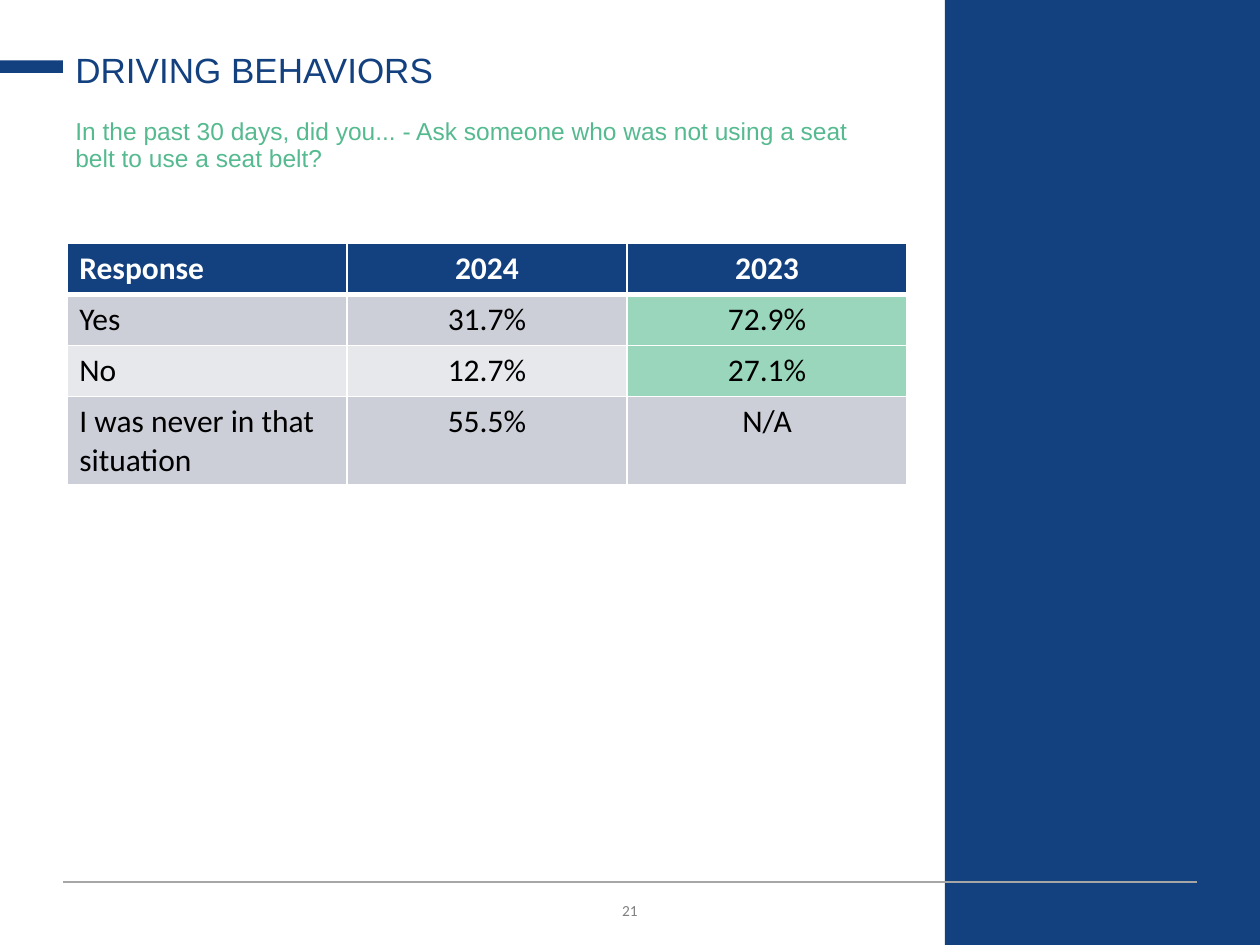
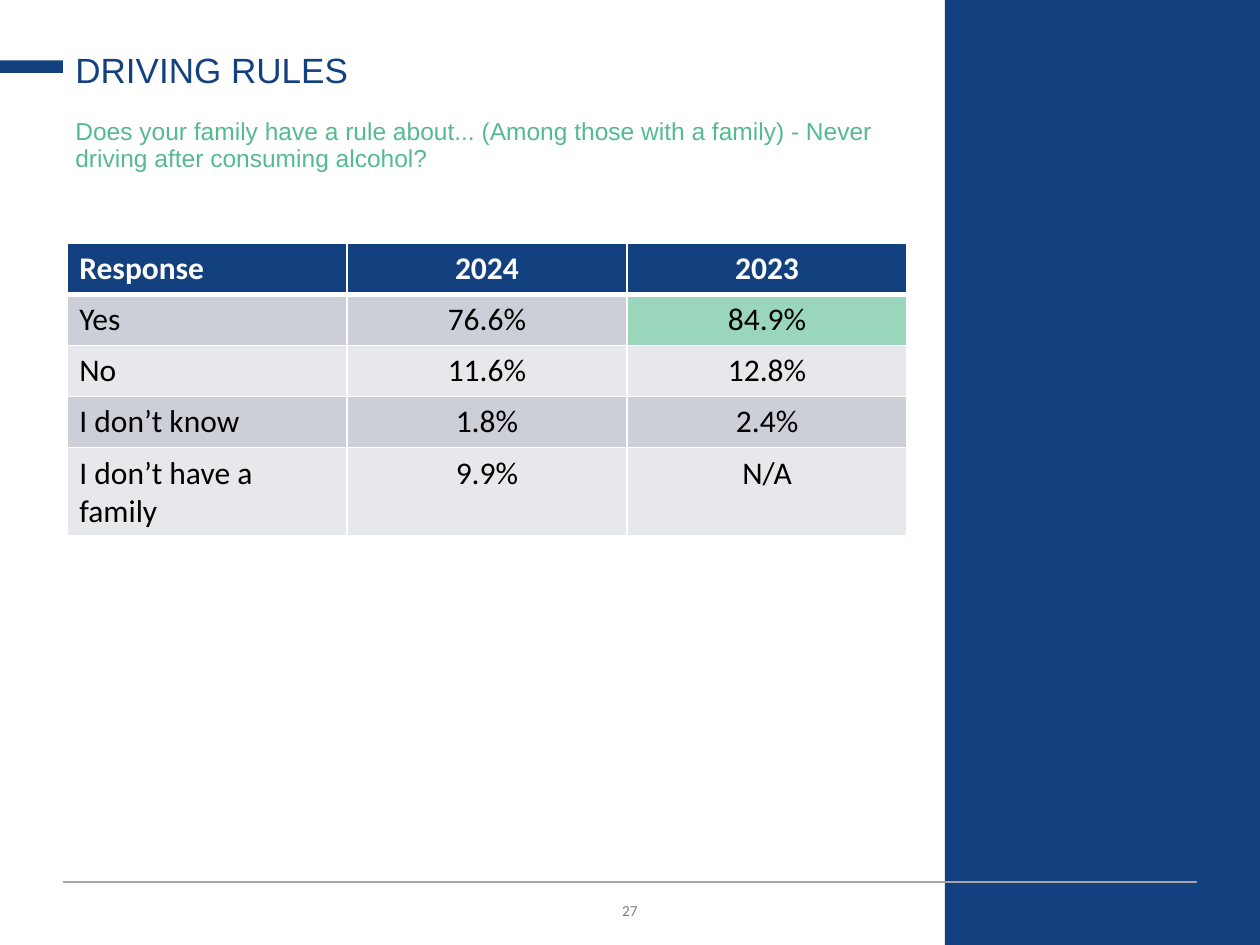
from dataclasses import dataclass, field
from typing import Any

import lxml.etree
import pptx
import pptx.dml.color
import pptx.enum.shapes
import pptx.enum.text
import pptx.oxml.ns
import pptx.util

Color = pptx.dml.color.RGBColor
Align = pptx.enum.text.PP_ALIGN
Anchor = pptx.enum.text.MSO_ANCHOR
Shapes = pptx.enum.shapes.MSO_SHAPE
SLIDE_WIDTH, SLIDE_HEIGHT = pptx.util.Inches(10), pptx.util.Inches(7.5)
GRID_COLUMNS, GRID_ROWS = 20, 75


@dataclass(frozen=True)
class Theme:
    navy: str = "13407E"
    green: str = "55BA8F"
    highlight: str = "99D6BC"
    bands: tuple[str, str] = ("CCCFD8", "E7E8EC")
    rule: str = "A6A6A6"
    number: str = "808080"
    white: str = "FFFFFF"
    black: str = "000000"
    heading_font: str = "Arial"
    table_font: str = "Calibri"
    title_size: int = 20
    question_size: int = 14
    table_size: int = 18
    number_size: int = 11
    rule_width: float = 0.75
    border_width: int = 1
    header_border_width: int = 3


THEME = Theme()


@dataclass(frozen=True)
class Region:
    """A rectangle measured in grid columns and grid rows."""
    column: float
    row: float
    columns: float
    rows: float

    def lengths(self) -> tuple[int, int, int, int]:
        column, row = SLIDE_WIDTH / GRID_COLUMNS, SLIDE_HEIGHT / GRID_ROWS
        return (round(self.column * column), round(self.row * row),
                round(self.columns * column), round(self.rows * row))


@dataclass(frozen=True)
class TextStyle:
    size: int
    font: str
    color: str
    bold: bool = False
    align: Any = Align.LEFT
    line_spacing: float = 1.0


@dataclass(frozen=True)
class TextBlock:
    region: Region
    style: TextStyle
    anchor: Any = Anchor.TOP


@dataclass(frozen=True)
class Answer:
    response: str
    current: str
    previous: str
    highlighted: bool = False


@dataclass(frozen=True)
class SurveySlide:
    number: int
    title: str
    question: str
    answers: list[Answer] = field(default_factory=list)


SIDE_BAND = Region(15, 0, 5, GRID_ROWS)
TITLE_MARK = Region(0, 4.8, 1, 1)
FOOTER_RULE = Region(1, 70, 18, 0)
TABLE_COLUMN, TABLE_ROW, TABLE_COLUMNS, ANSWER_ROWS = 1.06, 19.3, 13.34, 4.06

TITLE = TextBlock(Region(1, 2.9, 13.4, 4.8),
                  TextStyle(THEME.title_size, THEME.heading_font, THEME.navy, line_spacing=0.9),
                  Anchor.BOTTOM)
QUESTION = TextBlock(Region(1, 9, 13.4, 6.7),
                     TextStyle(THEME.question_size, THEME.heading_font, THEME.green,
                               line_spacing=0.9))
PAGE_NUMBER = TextBlock(Region(1, 70.6, 18, 3),
                        TextStyle(THEME.number_size, THEME.table_font, THEME.number,
                                  align=Align.CENTER),
                        Anchor.MIDDLE)

SURVEY_SLIDES = [
    SurveySlide(
        21, "DRIVING BEHAVIORS",
        "In the past 30 days, did you... - Ask someone who was not using a seat belt "
        "to use a seat belt?",
        [Answer("Yes", "31.7%", "72.9%", highlighted=True),
         Answer("No", "12.7%", "27.1%", highlighted=True),
         Answer("I was never in that situation", "55.5%", "N/A")]),
    SurveySlide(
        27, "DRIVING RULES",
        "Does your family have a rule about... (Among those with a family) - Never "
        "driving after consuming alcohol?",
        [Answer("Yes", "76.6%", "84.9%", highlighted=True),
         Answer("No", "11.6%", "12.8%"),
         Answer("I don’t know", "1.8%", "2.4%"),
         Answer("I don’t have a family", "9.9%", "N/A")]),
]


def apply_format(target: Any, values: dict[str, Any]) -> None:
    for name, value in values.items():
        setattr(target, name, value)


def write_text(text_frame: Any, text: str, style: TextStyle) -> Any:
    """Fill the first paragraph and return its run."""
    paragraph = text_frame.paragraphs[0]
    apply_format(paragraph, {"alignment": style.align, "line_spacing": style.line_spacing})
    run = paragraph.add_run()
    run.text = text
    apply_format(run.font, {"size": pptx.util.Pt(style.size), "name": style.font,
                            "bold": style.bold})
    run.font.color.rgb = Color.from_string(style.color)
    return run


def add_text(slide: Any, text: str, block: TextBlock) -> Any:
    text_frame = slide.shapes.add_textbox(*block.region.lengths()).text_frame
    apply_format(text_frame, {"word_wrap": True, "vertical_anchor": block.anchor})
    return write_text(text_frame, text, block.style)


def add_bar(slide: Any, region: Region) -> None:
    shape = slide.shapes.add_shape(Shapes.RECTANGLE, *region.lengths())
    shape.shadow.inherit = False
    shape.fill.solid()
    shape.fill.fore_color.rgb = Color.from_string(THEME.navy)
    shape.line.fill.background()


def add_footer_rule(slide: Any) -> None:
    left, top, width, height = FOOTER_RULE.lengths()
    connector = slide.shapes.add_connector(pptx.enum.shapes.MSO_CONNECTOR.STRAIGHT,
                                           left, top, left + width, top + height)
    connector.line.width = pptx.util.Pt(THEME.rule_width)
    connector.line.color.rgb = Color.from_string(THEME.rule)
    lxml.etree.SubElement(connector._element.spPr, pptx.oxml.ns.qn("a:effectLst"))


def add_frame(slide: Any, number: int) -> None:
    """Draw the parts that every slide shares."""
    run = add_text(slide, str(number), PAGE_NUMBER)
    run.font._element.set("cap", "small")
    add_bar(slide, SIDE_BAND)
    add_footer_rule(slide)
    add_bar(slide, TITLE_MARK)


def set_borders(cell: Any, row: int) -> None:
    """Draw white borders, thicker on both sides of the header's lower edge."""
    qualified = pptx.oxml.ns.qn
    properties = cell._tc.get_or_add_tcPr()
    heavy_edge = {0: "lnB", 1: "lnT"}.get(row)
    for edge in ("lnL", "lnR", "lnT", "lnB"):
        width = THEME.header_border_width if edge == heavy_edge else THEME.border_width
        line = lxml.etree.SubElement(properties, qualified(f"a:{edge}"),
                                     w=str(pptx.util.Pt(width)))
        fill = lxml.etree.SubElement(line, qualified("a:solidFill"))
        lxml.etree.SubElement(fill, qualified("a:srgbClr"), val=THEME.white)


def fill_cell(cell: Any, text: str, row: int, column: int, background: str) -> None:
    set_borders(cell, row)
    cell.fill.solid()
    cell.fill.fore_color.rgb = Color.from_string(background)
    is_header = row == 0
    style = TextStyle(THEME.table_size, THEME.table_font,
                      THEME.white if is_header else THEME.black, bold=is_header,
                      align=Align.CENTER if column else Align.LEFT)
    write_text(cell.text_frame, text, style)


def add_answer_table(slide: Any, answers: list[Answer]) -> None:
    rows = [Answer("Response", "2024", "2023"), *answers]
    region = Region(TABLE_COLUMN, TABLE_ROW, TABLE_COLUMNS, ANSWER_ROWS * len(rows))
    table = slide.shapes.add_table(len(rows), 3, *region.lengths()).table
    for row, answer in enumerate(rows):
        band = THEME.bands[(row - 1) % 2] if row else THEME.navy
        backgrounds = (band, band, THEME.highlight if answer.highlighted else band)
        texts = (answer.response, answer.current, answer.previous)
        for column, (text, background) in enumerate(zip(texts, backgrounds)):
            fill_cell(table.cell(row, column), text, row, column, background)


def main() -> None:
    presentation = pptx.Presentation()
    apply_format(presentation, {"slide_width": SLIDE_WIDTH, "slide_height": SLIDE_HEIGHT})
    for survey in SURVEY_SLIDES:
        slide = presentation.slides.add_slide(presentation.slide_layouts[6])
        add_frame(slide, survey.number)
        add_text(slide, survey.question, QUESTION)
        add_text(slide, survey.title, TITLE)
        add_answer_table(slide, survey.answers)
    presentation.save("out.pptx")


if __name__ == "__main__":
    main()
